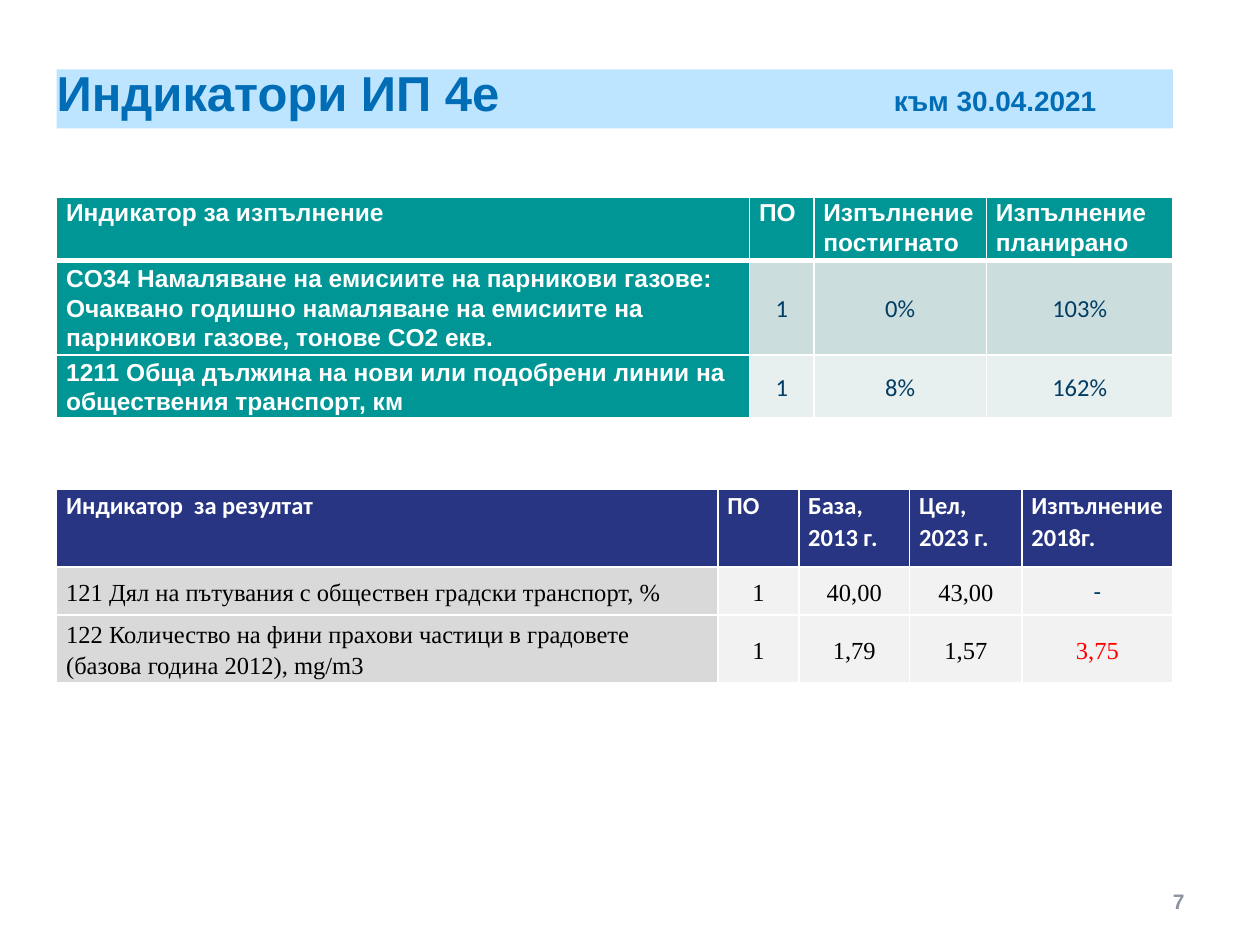
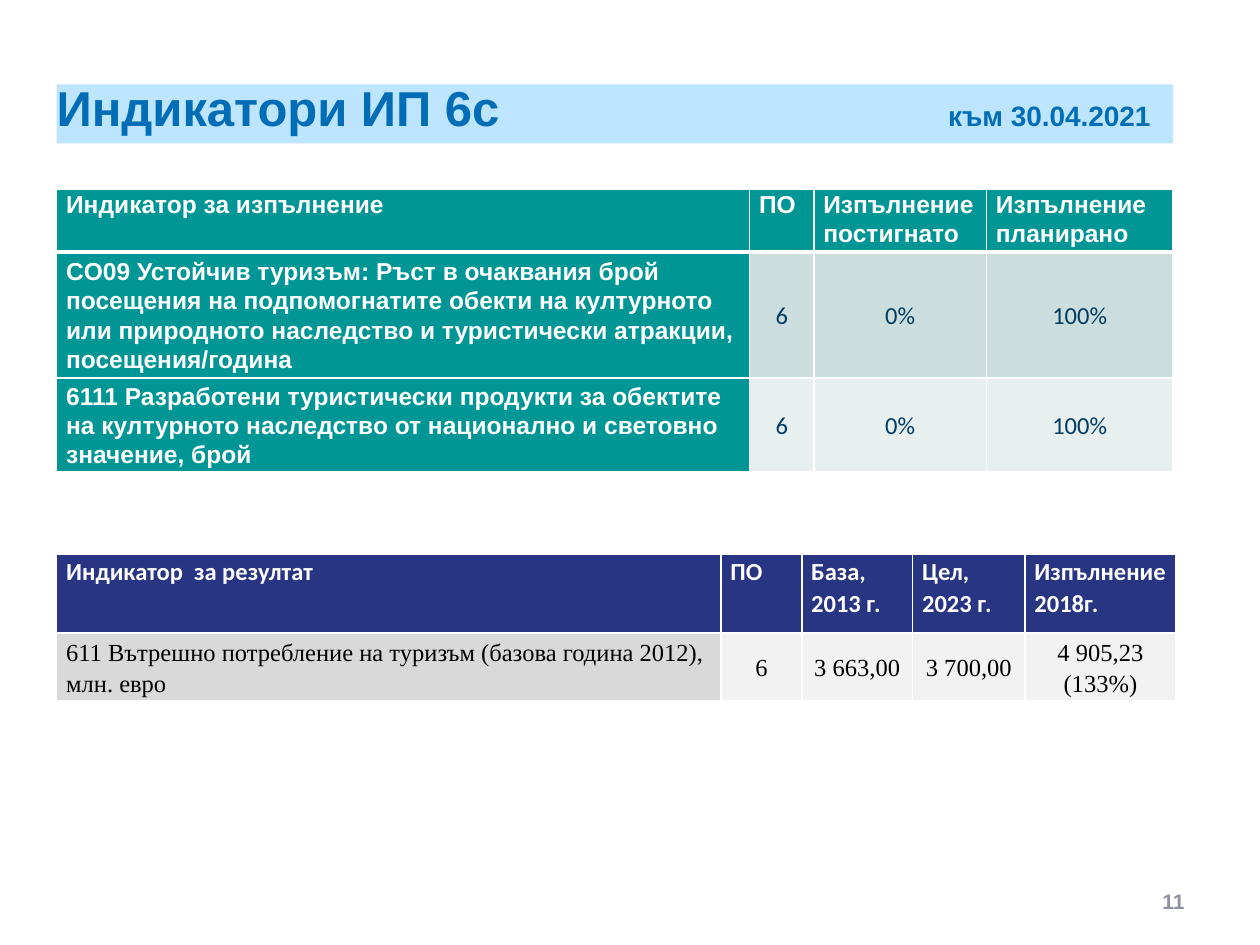
from lxml import etree
from pptx import Presentation
from pptx.dml.color import RGBColor
from pptx.enum.shapes import MSO_SHAPE as Shape
from pptx.enum.text import MSO_ANCHOR as Anchor, PP_ALIGN as Align
from pptx.oxml.ns import qn
from pptx.util import Pt

LEFT, BAND_WIDTH = 32.4, 637.92
WHITE, TEAL, NAVY = "FFFFFF", "009696", "283583"
BAND, TITLE, NUMBER, INK = "BDE5FF", "006DB6", "8C929F", "003C64"
LABEL_GREY, VALUE_GREY, RED, BLACK = "D9D9D9", "F2F2F2", "FF0000", "000000"
VALUE_TINTS = ["CCDDDD", "E7EFEF"]

OUTPUT_HEAD = ["Индикатор за изпълнение", "ПО", "Изпълнение постигнато", "Изпълнение планирано"]
OUTPUT_COLUMNS = [396, 36.72, 98.64, 106.56]
RESULT_HEAD = ["Индикатор  за резултат", "ПО", "База, 2013 г.", "Цел, 2023 г.", "Изпълнение 2018г."]
RESULT_COLUMNS = [46.2, 63.4, 64.2, 86.2]

ARIAL_WHITE = {"name": "Arial", "color": WHITE, "bold": True}
CALIBRI_WHITE = {"name": "Calibri", "color": WHITE, "bold": True}
CALIBRI_INK = {"name": "Calibri", "color": INK, "bold": False}
TIMES = {"name": "Times New Roman", "color": BLACK, "bold": False}

SLIDES = [
    {"number": "7", "title": "Индикатори ИП 4е", "band_top": 39.6, "date_tab": 478.4,
     "output_top": 113, "output_heights": [33.6, 50, 33.6],
     "outputs": [
         ["CO34 Намаляване на емисиите на парникови газове: Очаквано годишно намаляване "
          "на емисиите на парникови газове, тонове CO2 екв.", "1", "0%", "103%"],
         ["1211 Обща дължина на нови или подобрени линии на обществения транспорт, км",
          "1", "8%", "162%"]],
     "result_top": 279.4, "result_label_width": 377.9, "result_heights": [44.6, 27.4, 35],
     "results": [
         ["121 Дял на пътувания с обществен градски транспорт, %", "1", "40,00", "43,00", "-"],
         ["122 Количество на фини прахови частици в градовете (базова година 2012), mg/m3",
          "1", "1,79", "1,57", "3,75"]],
     "result_styles": {"-": CALIBRI_INK, "3,75": {**TIMES, "color": RED}}},
    {"number": "11", "title": "Индикатори ИП 6с", "band_top": 48.2, "date_tab": 509.4,
     "output_top": 108, "output_heights": [33.6, 66.8, 50],
     "outputs": [
         ["CO09 Устойчив туризъм: Ръст в очаквания брой посещения на подпомогнатите обекти "
          "на културното или природното наследство и туристически атракции, "
          "посещения/година", "6", "0%", "100%"],
         ["6111 Разработени туристически продукти за обектите на културното наследство "
          "от национално и световно значение, брой", "6", "0%", "100%"]],
     "result_top": 317, "result_label_width": 379.6, "result_heights": [44.6, 35],
     "results": [
         ["611 Вътрешно потребление на туризъм (базова година 2012), млн. евро",
          "6", "3 663,00", "3 700,00", "4 905,23 (133%)"]],
     "result_styles": {}},
]


def color(value):
    return RGBColor.from_string(value)


def apply(target, values):
    for name, value in values.items():
        setattr(target, name, value)


def add_run(paragraph, text, size, style):
    run = paragraph.add_run()
    run.text = text
    apply(run.font, {"size": Pt(size), "name": style["name"], "bold": style["bold"]})
    run.font.color.rgb = color(style["color"])


def add_title(slide, title, top, date_tab):
    shape = slide.shapes.add_shape(Shape.RECTANGLE, Pt(LEFT), Pt(top), Pt(BAND_WIDTH), Pt(33.8))
    shape.shadow.inherit = False
    shape.fill.solid()
    shape.fill.fore_color.rgb = color(BAND)
    shape.line.fill.background()
    frame = shape.text_frame
    apply(frame, {"margin_left": 0, "margin_right": 0, "margin_top": 0, "margin_bottom": 0,
                  "word_wrap": True, "vertical_anchor": Anchor.TOP})
    paragraph = frame.paragraphs[0]
    apply(paragraph, {"alignment": Align.LEFT, "line_spacing": Pt(30)})
    tabs = etree.SubElement(paragraph._p.get_or_add_pPr(), qn("a:tabLst"))
    etree.SubElement(tabs, qn("a:tab"), pos=str(Pt(date_tab)), algn="l")
    style = {"name": "Arial", "color": TITLE, "bold": True}
    add_run(paragraph, title, 28, style)
    add_run(paragraph, "\tкъм 30.04.2021", 16, style)


def add_page_number(slide, number):
    frame = slide.shapes.add_textbox(Pt(516.2), Pt(500.4), Pt(167.8), Pt(28.8)).text_frame
    apply(frame, {"word_wrap": True, "vertical_anchor": Anchor.MIDDLE})
    paragraph = frame.paragraphs[0]
    paragraph.alignment = Align.RIGHT
    add_run(paragraph, number, 12, {"name": "Arial", "color": NUMBER, "bold": True})


def set_borders(cell, bottom=1):
    properties = cell._tc.get_or_add_tcPr()
    widths = {"lnL": 1, "lnR": 1, "lnT": 1, "lnB": bottom}
    for position, (side, width) in enumerate(widths.items()):
        line = etree.Element(qn("a:" + side), w=str(Pt(width)))
        fill = etree.SubElement(line, qn("a:solidFill"))
        etree.SubElement(fill, qn("a:srgbClr"), val=WHITE)
        properties.insert(position, line)


def fill_cell(cell, text, fill, style, alignment, anchor=Anchor.MIDDLE, spacing=1.07, after=8, bottom=1):
    apply(cell, {"margin_left": Pt(5.4), "margin_right": Pt(5.4), "margin_top": 0,
                 "margin_bottom": 0, "vertical_anchor": anchor})
    cell.fill.solid()
    cell.fill.fore_color.rgb = color(fill)
    set_borders(cell, bottom)
    paragraph = cell.text_frame.paragraphs[0]
    apply(paragraph, {"alignment": alignment, "line_spacing": spacing, "space_after": Pt(after)})
    add_run(paragraph, text, 14, style)


def add_grid(slide, top, columns, heights):
    table = slide.shapes.add_table(len(heights), len(columns), Pt(LEFT), Pt(top),
                                   Pt(sum(columns)), Pt(sum(heights))).table
    for column, width in zip(table.columns, columns):
        column.width = Pt(width)
    for row, height in zip(table.rows, heights):
        row.height = Pt(height)
    return table


def fill_header(table, texts, fill, style, bottom=1):
    for column, text in enumerate(texts):
        fill_cell(table.cell(0, column), text, fill, style, Align.JUSTIFY, Anchor.TOP, bottom=bottom)


def add_output_table(slide, top, heights, rows):
    table = add_grid(slide, top, OUTPUT_COLUMNS, heights)
    fill_header(table, OUTPUT_HEAD, TEAL, ARIAL_WHITE, bottom=3)
    for index, (label, *values) in enumerate(rows, 1):
        fill_cell(table.cell(index, 0), label, TEAL, ARIAL_WHITE, Align.LEFT)
        for column, value in enumerate(values, 1):
            fill_cell(table.cell(index, column), value, VALUE_TINTS[index - 1], CALIBRI_INK, Align.CENTER)


def add_result_table(slide, top, label_width, heights, rows, styles):
    table = add_grid(slide, top, [label_width, *RESULT_COLUMNS], heights)
    fill_header(table, RESULT_HEAD, NAVY, CALIBRI_WHITE)
    for index, (label, *values) in enumerate(rows, 1):
        fill_cell(table.cell(index, 0), label, LABEL_GREY, TIMES, Align.LEFT, spacing=1.15, after=6)
        for column, value in enumerate(values, 1):
            style = styles.get(value, TIMES)
            spacing, after = (1.07, 8) if style is CALIBRI_INK else (1.15, 6)
            fill_cell(table.cell(index, column), value, VALUE_GREY, style, Align.CENTER,
                      spacing=spacing, after=after)


def main():
    presentation = Presentation()
    apply(presentation, {"slide_width": Pt(720), "slide_height": Pt(540)})
    for content in SLIDES:
        slide = presentation.slides.add_slide(presentation.slide_layouts[6])
        add_page_number(slide, content["number"])
        add_title(slide, content["title"], content["band_top"], content["date_tab"])
        add_output_table(slide, content["output_top"], content["output_heights"], content["outputs"])
        add_result_table(slide, content["result_top"], content["result_label_width"],
                         content["result_heights"], content["results"], content["result_styles"])
    presentation.save("out.pptx")


if __name__ == "__main__":
    main()
